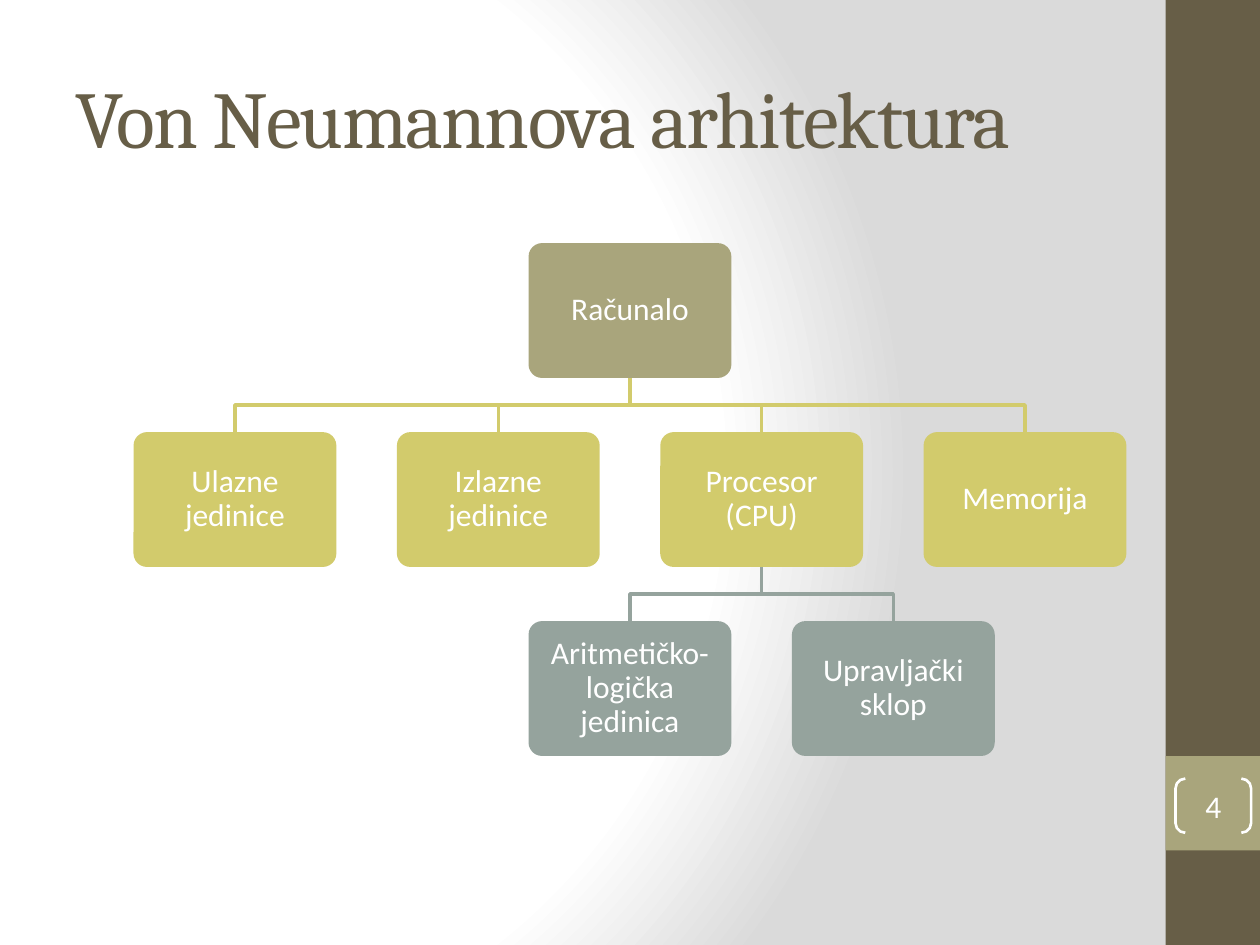
import pptx
import pptx.dml.color
import pptx.enum.shapes
import pptx.enum.text
import pptx.oxml
import pptx.oxml.ns
import pptx.util

Inches = pptx.util.Inches
SHAPES = pptx.enum.shapes.MSO_SHAPE
ALIGN = pptx.enum.text.PP_ALIGN

COLOURS = {
    "brown": "675E47",
    "olive": "A9A57C",
    "lime": "D2CB6C",
    "sage": "95A39D",
    "white": "FFFFFF",
    "grey": "DADADA",
}
LEVEL_COLOURS = ["olive", "lime", "sage"]

BOX_WIDTH, BOX_HEIGHT = 1.61, 1.07
COLUMN_PITCH, ROW_PITCH = 2.09, 1.5
ROOT_CENTRE, ROOT_TOP = 5, 1.93

COMPUTER = ("Računalo", [
    ("Ulazne jedinice", []),
    ("Izlazne jedinice", []),
    ("Procesor (CPU)", [
        ("Aritmetičko- logička jedinica", []),
        ("Upravljački sklop", []),
    ]),
    ("Memorija", []),
])


class SlideBuilder:
    """Draws styled elements on one slide; lengths are in inches."""

    heading_font = "Cambria"
    body_font = "Calibri"

    def __init__(self, slide):
        self.slide = slide

    def colour(self, name):
        return pptx.dml.color.RGBColor.from_string(COLOURS[name])

    def background(self):
        """Circular gradient that stays white for three quarters of its radius."""
        stops = "".join(
            f'<a:gs pos="{percent * 1000}"><a:srgbClr val="{COLOURS[name]}"/></a:gs>'
            for percent, name in [(0, "white"), (75, "white"), (100, "grey")])
        backdrop = pptx.oxml.parse_xml(
            f'<p:bg {pptx.oxml.ns.nsdecls("p", "a")}><p:bgPr>'
            f'<a:gradFill rotWithShape="1"><a:gsLst>{stops}</a:gsLst>'
            '<a:path path="circle">'
            '<a:fillToRect l="20000" t="50000" r="100000" b="50000"/></a:path>'
            '</a:gradFill><a:effectLst/></p:bgPr></p:bg>')
        self.slide.element[0].insert(0, backdrop)

    def shape(self, preset, left, top, width, height, fill=None, line=None,
              line_width=1.5, corner=None):
        shape = self.slide.shapes.add_shape(
            preset, Inches(left), Inches(top), Inches(width), Inches(height))
        shape.shadow.inherit = False
        if corner is not None:
            shape.adjustments[0] = corner
        self.paint(shape, fill, line, line_width)
        return shape

    def paint(self, shape, fill, line, line_width):
        if fill:
            shape.fill.solid()
            shape.fill.fore_color.rgb = self.colour(fill)
        else:
            shape.fill.background()
        if line:
            shape.line.color.rgb = self.colour(line)
            shape.line.width = pptx.util.Pt(line_width)
        else:
            shape.line.fill.background()

    def label(self, shape, text, size, font, colour, align=ALIGN.CENTER,
              margin=None, line_spacing=None):
        frame = shape.text_frame
        frame.word_wrap = True
        frame.vertical_anchor = pptx.enum.text.MSO_ANCHOR.MIDDLE
        if margin is not None:
            frame.margin_left = frame.margin_right = Inches(margin)
            frame.margin_top = frame.margin_bottom = Inches(margin)
        paragraph = frame.paragraphs[0]
        paragraph.alignment = align
        paragraph.line_spacing = line_spacing
        run = paragraph.add_run()
        run.text = text
        run.font.size = pptx.util.Pt(size)
        run.font.name = font
        run.font.color.rgb = self.colour(colour)
        return run

    def title(self, text):
        heading = self.slide.shapes.add_textbox(
            Inches(0.5), Inches(0.3), Inches(8.33), Inches(1.25))
        run = self.label(heading, text, 46, self.heading_font, "brown", ALIGN.LEFT)
        run.font._element.set("spc", "-100")

    def sidebar(self, number):
        self.shape(SHAPES.RECTANGLE, 9.25, 0, 0.75, 7.5, "brown")
        self.shape(SHAPES.RECTANGLE, 9.25, 6, 0.75, 0.75, "olive")
        brackets = self.shape(SHAPES.DOUBLE_BRACKET, 9.33, 6.18, 0.6, 0.43,
                              line="white", corner=0.18)
        self.label(brackets, number, 18, self.body_font, "white", margin=0)

    def box(self, text, centre, top, fill):
        box = self.shape(SHAPES.ROUNDED_RECTANGLE, centre - BOX_WIDTH / 2, top,
                         BOX_WIDTH, BOX_HEIGHT, fill, corner=0.1)
        self.label(box, text, 18, self.body_font, "white", margin=0.07,
                   line_spacing=0.9)

    def branch(self, parent_centre, parent_bottom, child_centre, child_top, colour):
        middle = (parent_bottom + child_top) / 2
        corners = [(parent_centre, middle), (child_centre, middle),
                   (child_centre, child_top)]
        outline = self.slide.shapes.build_freeform(
            Inches(parent_centre), Inches(parent_bottom))
        outline.add_line_segments(
            [(Inches(x), Inches(y)) for x, y in corners], close=False)
        branch = outline.convert_to_shape()
        branch.shadow.inherit = False
        self.paint(branch, None, colour, 2)

    def tree(self, node, centre=ROOT_CENTRE, level=0):
        """Draw a node, then its children spread evenly beneath it."""
        text, children = node
        top = ROOT_TOP + level * ROW_PITCH
        self.box(text, centre, top, LEVEL_COLOURS[level])
        for index, child in enumerate(children):
            child_centre = centre + (index - (len(children) - 1) / 2) * COLUMN_PITCH
            self.branch(centre, top + BOX_HEIGHT, child_centre, top + ROW_PITCH,
                        LEVEL_COLOURS[level + 1])
            self.tree(child, child_centre, level + 1)


def main():
    presentation = pptx.Presentation()
    presentation.slide_width = Inches(10)
    presentation.slide_height = Inches(7.5)
    builder = SlideBuilder(
        presentation.slides.add_slide(presentation.slide_layouts[6]))
    builder.background()
    builder.sidebar("4")
    builder.tree(COMPUTER)
    builder.title("Von Neumannova arhitektura")
    presentation.save("out.pptx")


if __name__ == "__main__":
    main()
